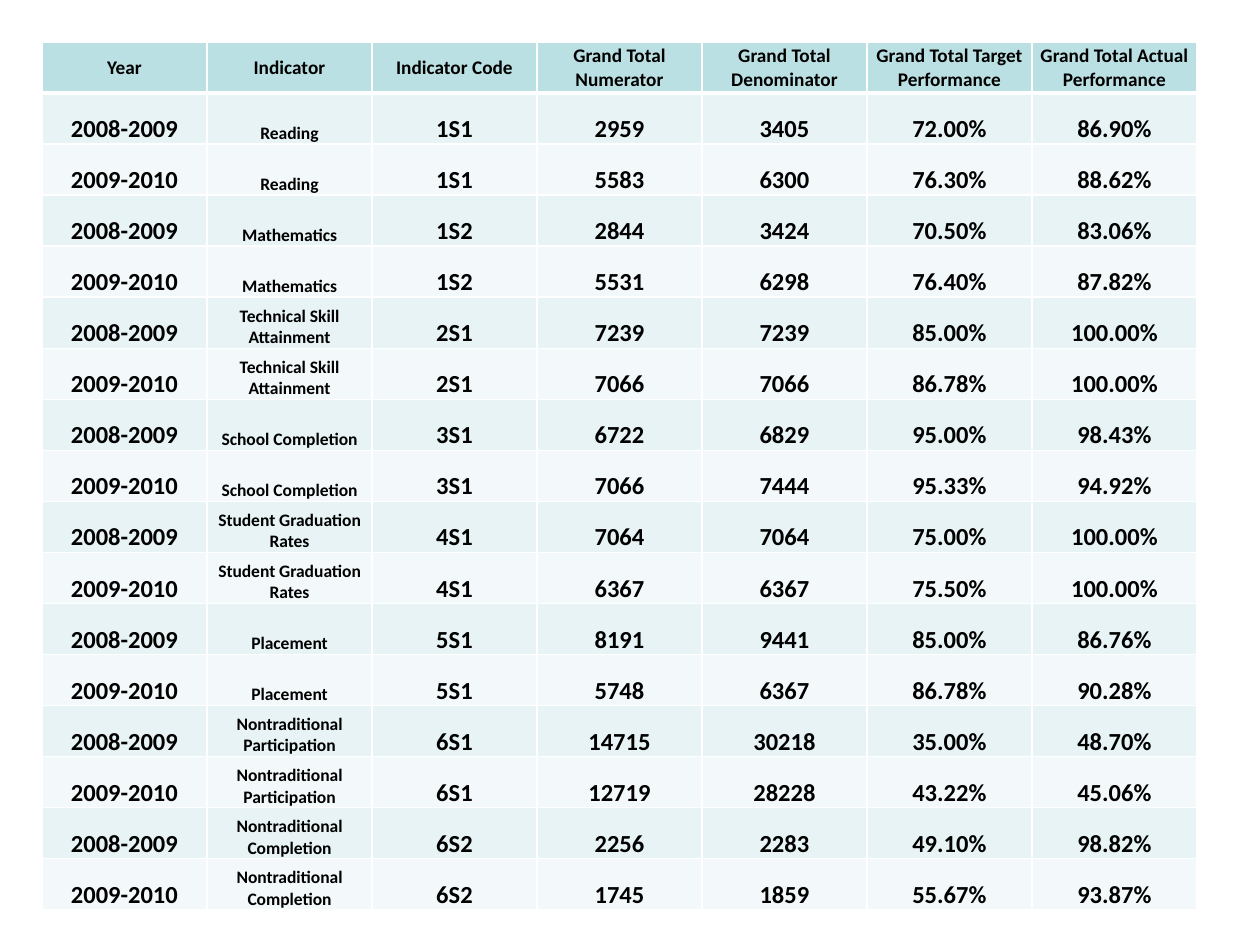
import pptx
import pptx.dml.color
import pptx.enum.text
import pptx.oxml.ns
import pptx.util
import lxml.etree

Pt = pptx.util.Pt
ANCHOR = pptx.enum.text.MSO_ANCHOR

HEADERS = [
    "Year", "Indicator", "Indicator Code", "Grand Total Numerator",
    "Grand Total Denominator", "Grand Total Target Performance",
    "Grand Total Actual Performance",
]
YEARS = ["2008-2009", "2009-2010"]
INDICATORS = [
    ("Reading", "1S1",
     ["2959", "3405", "72.00%", "86.90%"], ["5583", "6300", "76.30%", "88.62%"]),
    ("Mathematics", "1S2",
     ["2844", "3424", "70.50%", "83.06%"], ["5531", "6298", "76.40%", "87.82%"]),
    ("Technical Skill Attainment", "2S1",
     ["7239", "7239", "85.00%", "100.00%"], ["7066", "7066", "86.78%", "100.00%"]),
    ("School Completion", "3S1",
     ["6722", "6829", "95.00%", "98.43%"], ["7066", "7444", "95.33%", "94.92%"]),
    ("Student Graduation Rates", "4S1",
     ["7064", "7064", "75.00%", "100.00%"], ["6367", "6367", "75.50%", "100.00%"]),
    ("Placement", "5S1",
     ["8191", "9441", "85.00%", "86.76%"], ["5748", "6367", "86.78%", "90.28%"]),
    ("Nontraditional Participation", "6S1",
     ["14715", "30218", "35.00%", "48.70%"], ["12719", "28228", "43.22%", "45.06%"]),
    ("Nontraditional Completion", "6S2",
     ["2256", "2283", "49.10%", "98.82%"], ["1745", "1859", "55.67%", "93.87%"]),
]


def color(value):
    return pptx.dml.color.RGBColor.from_string(value)


def write_text(text_frame, text, *, size, font, fill, bold=True):
    paragraph = text_frame.paragraphs[0]
    paragraph.alignment = pptx.enum.text.PP_ALIGN.CENTER
    run = paragraph.add_run()
    run.text = text
    run.font.size = Pt(size)
    run.font.name = font
    run.font.bold = bold
    run.font.color.rgb = color(fill)


class SlideBuilder:
    font = "Calibri"
    text_color = "000000"
    border_color = "FFFFFF"
    header_fill = "BBE0E3"
    band_fills = ["E7F3F4", "F3F9FA"]
    header_size = 11
    body_size = 14
    indicator_size = 10

    def __init__(self, presentation):
        self.slide = presentation.slides.add_slide(presentation.slide_layouts[6])

    def add_borders(self, cell, widths):
        properties = cell._tc.get_or_add_tcPr()
        qualified = pptx.oxml.ns.qn
        for position, (side, width) in enumerate(widths.items()):
            line = lxml.etree.Element(qualified(f"a:ln{side}"), w=str(Pt(width)))
            solid = lxml.etree.SubElement(line, qualified("a:solidFill"))
            lxml.etree.SubElement(solid, qualified("a:srgbClr"), val=self.border_color)
            properties.insert(position, line)

    def add_cell(self, cell, text, *, size, fill, anchor, top=1, bottom=1):
        cell.margin_left = cell.margin_right = cell.margin_top = Pt(0.7)
        cell.margin_bottom = 0
        cell.vertical_anchor = anchor
        cell.fill.solid()
        cell.fill.fore_color.rgb = color(fill)
        self.add_borders(cell, {"L": 1, "R": 1, "T": top, "B": bottom})
        write_text(cell.text_frame, text, size=size, font=self.font, fill=self.text_color)

    def add_table(self, headers, rows, left, top, width, height):
        shape = self.slide.shapes.add_table(
            len(rows) + 1, len(headers), Pt(left), Pt(top), Pt(width), Pt(height))
        table = shape.table
        for column in table.columns:
            column.width = Pt(width / len(headers))
        for row in table.rows:
            row.height = Pt(height / (len(rows) + 1))
        for column, text in enumerate(headers):
            self.add_cell(table.cell(0, column), text, size=self.header_size,
                          fill=self.header_fill, anchor=ANCHOR.MIDDLE, bottom=3)
        for index, values in enumerate(rows):
            for column, text in enumerate(values):
                self.add_cell(
                    table.cell(index + 1, column), text,
                    size=self.indicator_size if column == 1 else self.body_size,
                    fill=self.band_fills[index % 2], anchor=ANCHOR.BOTTOM,
                    top=3 if index == 0 else 1)


def main():
    presentation = pptx.Presentation()
    presentation.slide_width = Pt(720)
    presentation.slide_height = Pt(540)
    rows = [
        [year, indicator, code, *figures]
        for indicator, code, *results in INDICATORS
        for year, figures in zip(YEARS, results)
    ]
    SlideBuilder(presentation).add_table(HEADERS, rows, 24, 24, 660, 496)
    presentation.save("out.pptx")


if __name__ == "__main__":
    main()
